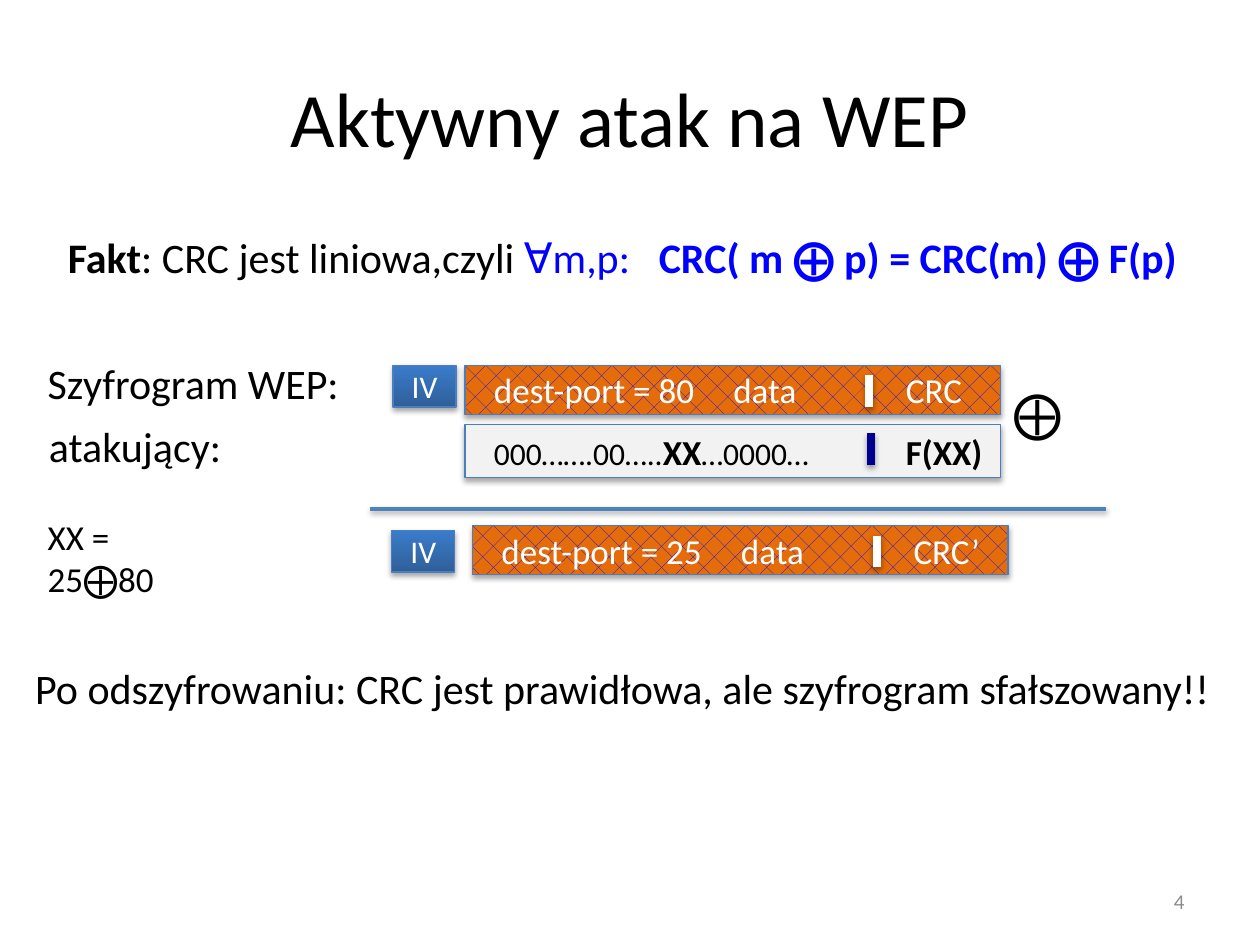
from lxml import etree
from pptx import Presentation
from pptx.dml.color import RGBColor
from pptx.enum.dml import MSO_PATTERN
from pptx.enum.shapes import MSO_CONNECTOR, MSO_SHAPE
from pptx.enum.text import MSO_ANCHOR, PP_ALIGN
from pptx.oxml.ns import qn
from pptx.util import Inches, Pt

LEFT, CENTER, RIGHT = PP_ALIGN.LEFT, PP_ALIGN.CENTER, PP_ALIGN.RIGHT
TOP, MIDDLE = MSO_ANCHOR.TOP, MSO_ANCHOR.MIDDLE
RECT = MSO_SHAPE.RECTANGLE
STRAIGHT = MSO_CONNECTOR.STRAIGHT
BRICK = MSO_PATTERN.DIAGONAL_BRICK
FONT = "Calibri"
BLACK, WHITE, BLUE = "000000", "FFFFFF", "0000FF"
PACKET_WIDTH = 4.25
PACKET_TABS = (1.9, 3.27)


def color(value):
    return RGBColor.from_string(value)


def add_shadow(effects, opacity, distance):
    shadow = etree.SubElement(effects, qn("a:outerShdw"), blurRad=str(Pt(3.1)),
                              dist=str(Pt(distance)), dir="5400000", rotWithShape="0")
    rgb = etree.SubElement(shadow, qn("a:srgbClr"), val=BLACK)
    etree.SubElement(rgb, qn("a:alpha"), val=str(opacity * 1000))


def add_tabs(p, positions):
    tabs = etree.SubElement(p._p.get_or_add_pPr(), qn("a:tabLst"))
    for position in positions:
        etree.SubElement(tabs, qn("a:tab"), pos=str(Inches(position)), algn="l")


def write(tf, runs, size, fill=BLACK, align=LEFT, anchor=TOP, tabs=()):
    tf.vertical_anchor = anchor
    p = tf.paragraphs[0]
    p.alignment = align
    p.font.name, p.font.size = FONT, Pt(size)
    p.font.color.rgb = color(fill)
    if tabs:
        add_tabs(p, tabs)
    for text, style in runs:
        r = p.add_run()
        r.text = text
        r.font.bold = style.get("bold")
        if "size" in style:
            r.font.size = Pt(style["size"])
        if "fill" in style:
            r.font.color.rgb = color(style["fill"])
    return p


def add_text(s, box, runs, size, wrap=False, **style):
    tf = s.shapes.add_textbox(*map(Inches, box)).text_frame
    tf.word_wrap = wrap
    write(tf, runs, size, **style)
    return tf


def add_box(s, left, top, width, height):
    sp = s.shapes.add_shape(RECT, *map(Inches, (left, top, width, height)))
    sp.line.color.rgb = color("4B7EBC")
    sp.line.width = Pt(0.75)
    sp.shadow.inherit = False
    add_shadow(sp._element.spPr.find(qn("a:effectLst")), 35, 1.8)
    return sp


def add_line(s, x1, y1, x2, y2, fill, width):
    line = s.shapes.add_connector(STRAIGHT, *map(Inches, (x1, y1, x2, y2)))
    line.line.color.rgb = color(fill)
    line.line.width = Pt(width)
    add_shadow(etree.SubElement(line._element.spPr, qn("a:effectLst")), 38, 1.6)


def add_separator(s, x, top, fill):
    add_line(s, x, top, x, top + 0.25, fill, 4.5)


def add_iv(s, left, top):
    sp = add_box(s, left, top, 0.5, 0.33)
    sp.fill.gradient()
    sp.fill.gradient_angle = 90
    for stop, shade in zip(sp.fill.gradient_stops, ("2F5F99", "3A7CCB")):
        stop.color.rgb = color(shade)
    write(sp.text_frame, [("IV", {})], 18, WHITE, CENTER, MIDDLE)


def add_packet(s, left, top, height, runs, size, fill):
    sp = add_box(s, left, top, PACKET_WIDTH, height)
    sp.text_frame.margin_left = Inches(0.23)
    write(sp.text_frame, runs, size, fill, LEFT, MIDDLE, PACKET_TABS)
    return sp


def add_encrypted_packet(s, left, top, port, crc):
    runs = [(f"dest-port = {port}\tdata\t{crc}", {})]
    sp = add_packet(s, left, top, 0.39, runs, 20, WHITE)
    sp.fill.patterned()
    sp.fill.pattern = BRICK
    sp.fill.fore_color.rgb = color(BLUE)
    sp.fill.back_color.rgb = color("E46C0A")
    add_separator(s, left + 3.21, top + 0.08, WHITE)


def add_attack_mask(s, left, top):
    big = {"size": 20, "bold": True}
    runs = [("000…….00…..", {}), ("XX", big), ("…0000…\t", {}), ("F(XX)", big)]
    sp = add_packet(s, left, top, 0.42, runs, 18, BLACK)
    sp.fill.solid()
    sp.fill.fore_color.rgb = color("F2F2F2")
    add_separator(s, left + 3.22, top + 0.07, "000090")


def main():
    prs = Presentation()
    prs.slide_width, prs.slide_height = Inches(10), Inches(7.5)
    s = prs.slides.add_slide(prs.slide_layouts[6])

    add_text(s, (0.5, 0.3, 9, 1.25), [("Aktywny atak na WEP", {})], 44, wrap=True,
             align=CENTER, anchor=MIDDLE)
    add_text(s, (7.17, 6.95, 2.33, 0.4), [("4", {})], 12, wrap=True,
             fill="8C8C8C", align=RIGHT, anchor=MIDDLE)
    fact = [("Fakt", {"bold": True}), (": CRC jest liniowa,czyli ", {}),
            ("∀m,p:\t", {"fill": BLUE}),
            ("CRC( m ⨁ p) = CRC(m) ⨁ F(p)", {"fill": BLUE, "bold": True})]
    tf = add_text(s, (0.44, 1.79, 9, 4.48), fact, 24, wrap=True, tabs=(4.69,))
    tf.paragraphs[0].space_before = Pt(4.8)

    add_text(s, (0.28, 2.79, 2.64, 0.5), [("Szyfrogram WEP:", {})], 24)
    add_iv(s, 3.12, 2.9)
    add_encrypted_packet(s, 3.69, 2.9, 80, "CRC")

    add_text(s, (0.29, 3.29, 1.59, 0.5), [("atakujący:", {})], 24)
    add_attack_mask(s, 3.69, 3.37)
    add_text(s, (7.94, 2.99, 0.55, 0.57), [("⨁", {})], 28)
    add_line(s, 2.94, 4.04, 8.78, 4.04, "4F81BD", 2)

    add_iv(s, 3.11, 4.21)
    add_encrypted_packet(s, 3.75, 4.17, 25, "CRC’")
    tf = add_text(s, (0.28, 4.04, 1.58, 0.44), [("XX = 25⨁80", {})], 20, wrap=True)
    tf.margin_right = Inches(0.3)

    add_text(s, (0.18, 5.21, 9.78, 0.5),
             [("Po odszyfrowaniu: CRC jest prawidłowa, ale szyfrogram sfałszowany!!", {})], 24)
    prs.save("out.pptx")


if __name__ == "__main__":
    main()
